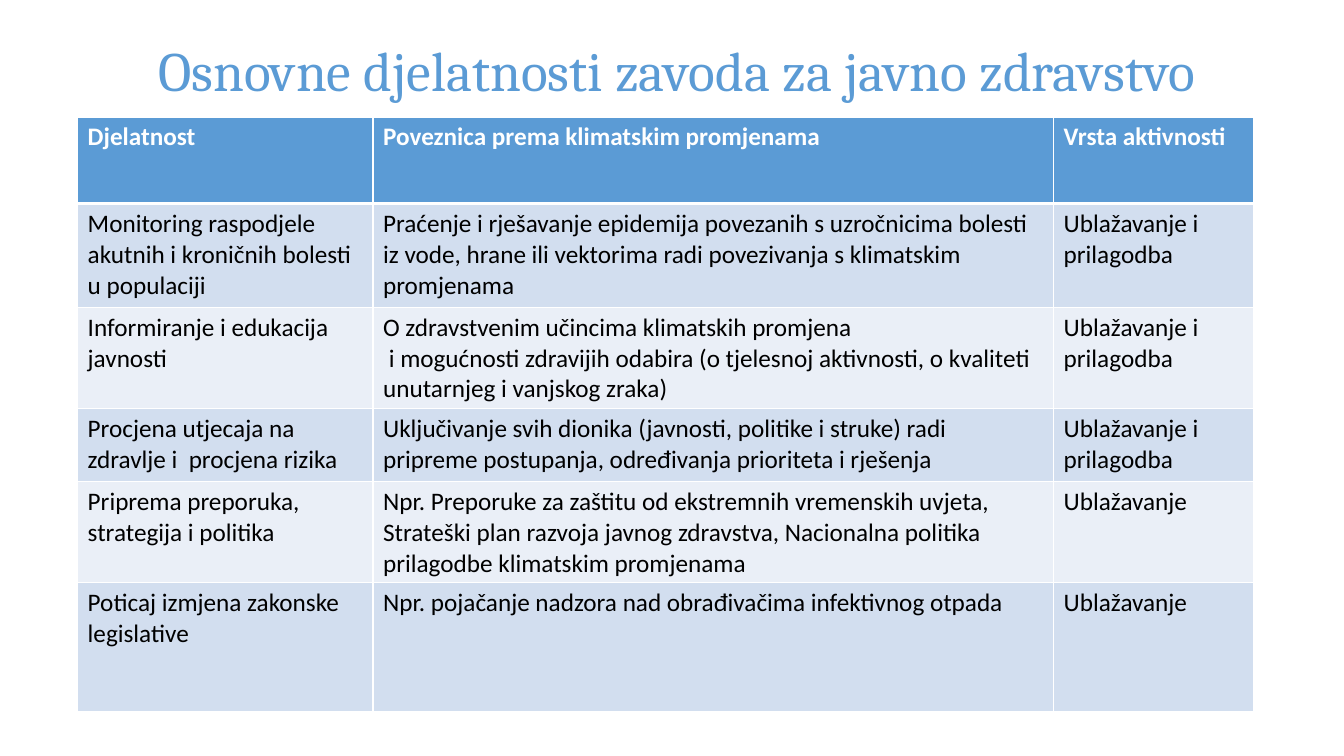
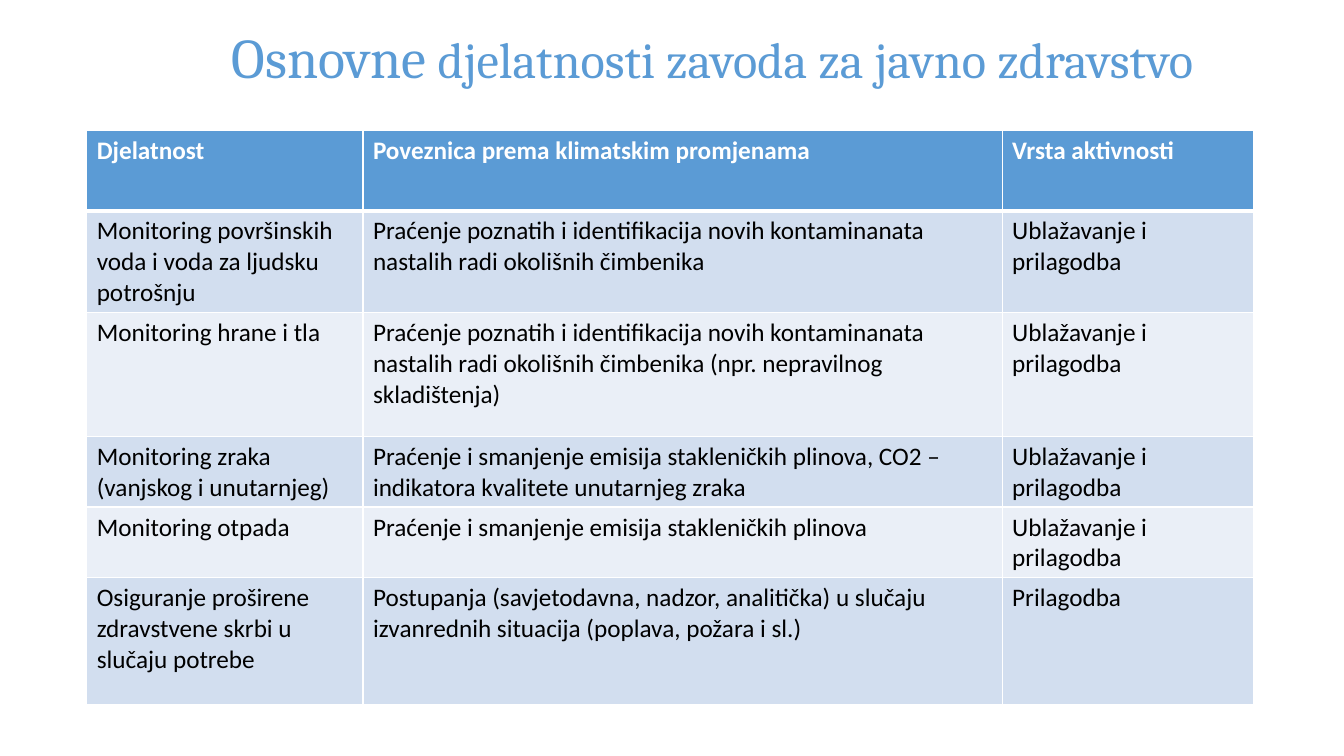
from lxml import etree
from pptx import Presentation
from pptx import util as u
from pptx.dml import color
from pptx.enum import text
from pptx.oxml import ns

PX = 9144
COLORS = {
    "accent": "5B9BD5",
    "band_dark": "D2DEEF",
    "band_light": "EAEFF7",
    "white": "FFFFFF",
    "black": "000000",
}
TITLE_FONT = "Cambria"
BODY_FONT = "Calibri"
HEADER = ["Djelatnost", "Poveznica prema klimatskim promjenama", "Vrsta aktivnosti"]
BOTH = "Ublažavanje i prilagodba"

PAGES = [
    {
        "title": [("Osnovne djelatnosti zavoda za javno zdravstvo", 39.6)],
        "title_box": (100, 0, 1142, 145),
        "table_at": (77, 116),
        "columns": [293, 675, 198],
        "rows": [86, 103, 100, 73, 70, 128],
        "cells": [
            ["Monitoring raspodjele akutnih i kroničnih bolesti u populaciji",
             "Praćenje i rješavanje epidemija povezanih s uzročnicima bolesti iz vode, "
             "hrane ili vektorima radi povezivanja s klimatskim promjenama",
             BOTH],
            ["Informiranje i edukacija javnosti",
             "O zdravstvenim učincima klimatskih promjena\n"
             " i mogućnosti zdravijih odabira (o tjelesnoj aktivnosti, o kvaliteti "
             "unutarnjeg i vanjskog zraka)",
             BOTH],
            ["Procjena utjecaja na zdravlje i  procjena rizika",
             "Uključivanje svih dionika (javnosti, politike i struke) radi pripreme "
             "postupanja, određivanja prioriteta i rješenja",
             BOTH],
            ["Priprema preporuka, strategija i politika",
             "Npr. Preporuke za zaštitu od ekstremnih vremenskih uvjeta, Strateški plan "
             "razvoja javnog zdravstva, Nacionalna politika prilagodbe klimatskim promjenama",
             "Ublažavanje"],
            ["Poticaj izmjena zakonske legislative",
             "Npr. pojačanje nadzora nad obrađivačima infektivnog otpada",
             "Ublažavanje"],
        ],
    },
    {
        "title": [("Osnovne", 40), (" djelatnosti zavoda za javno zdravstvo", 36)],
        "title_box": (171, 10, 1071, 100),
        "table_at": (86, 129),
        "columns": [274, 634, 249],
        "rows": [80, 101, 123, 70, 66, 126],
        "cells": [
            ["Monitoring površinskih voda i voda za ljudsku potrošnju",
             "Praćenje poznatih i identifikacija novih kontaminanata nastalih radi "
             "okolišnih čimbenika",
             BOTH],
            ["Monitoring hrane i tla",
             "Praćenje poznatih i identifikacija novih kontaminanata nastalih radi "
             "okolišnih čimbenika (npr. nepravilnog skladištenja)",
             BOTH],
            ["Monitoring zraka (vanjskog i unutarnjeg)",
             "Praćenje i smanjenje emisija stakleničkih plinova, CO2 – indikatora "
             "kvalitete unutarnjeg zraka",
             BOTH],
            ["Monitoring otpada", "Praćenje i smanjenje emisija stakleničkih plinova", BOTH],
            ["Osiguranje proširene zdravstvene skrbi u slučaju potrebe",
             "Postupanja (savjetodavna, nadzor, analitička) u slučaju izvanrednih "
             "situacija (poplava, požara i sl.)",
             "Prilagodba"],
        ],
    },
]


def style_font(font, name, size, shade, bold=False):
    font.name = name
    font.size = u.Pt(size)
    font.bold = bold
    font.color.rgb = color.RGBColor.from_string(COLORS[shade])


def add_borders(cell, row_index):
    properties = cell._tc.get_or_add_tcPr()
    widths = {"lnL": 1, "lnR": 1, "lnT": 3 if row_index == 1 else 1,
              "lnB": 3 if row_index == 0 else 1}
    for side, width in widths.items():
        line = etree.SubElement(properties, ns.qn("a:" + side), w=str(u.Pt(width)))
        fill = etree.SubElement(line, ns.qn("a:solidFill"))
        etree.SubElement(fill, ns.qn("a:srgbClr"), val=COLORS["white"])


deck = Presentation()
deck.slide_width = 1333 * PX
deck.slide_height = 750 * PX

for content in PAGES:
    page = deck.slides.add_slide(deck.slide_layouts[6])

    box = page.shapes.add_textbox(*[n * PX for n in content["title_box"]])
    box.text_frame.word_wrap = True
    box.text_frame.vertical_anchor = text.MSO_ANCHOR.MIDDLE
    para = box.text_frame.paragraphs[0]
    para.alignment = text.PP_ALIGN.CENTER
    para.line_spacing = 0.9
    for words, size in content["title"]:
        span = para.add_run()
        span.text = words
        style_font(span.font, TITLE_FONT, size, "accent")

    rows, columns = content["rows"], content["columns"]
    left, top = content["table_at"]
    table = page.shapes.add_table(
        len(rows), len(columns), left * PX, top * PX,
        sum(columns) * PX, sum(rows) * PX).table
    for column, width in zip(table.columns, columns):
        column.width = width * PX
    for row, height in zip(table.rows, rows):
        row.height = height * PX

    for row_index, labels in enumerate([HEADER] + content["cells"]):
        is_header = row_index == 0
        band = "accent" if is_header else "band_dark" if row_index % 2 else "band_light"
        for column_index, label in enumerate(labels):
            cell = table.cell(row_index, column_index)
            add_borders(cell, row_index)
            cell.fill.solid()
            cell.fill.fore_color.rgb = color.RGBColor.from_string(COLORS[band])
            cell.text_frame.text = label
            for para in cell.text_frame.paragraphs:
                for span in para.runs:
                    style_font(span.font, BODY_FONT, 18,
                               "white" if is_header else "black", is_header)

deck.save("out.pptx")
